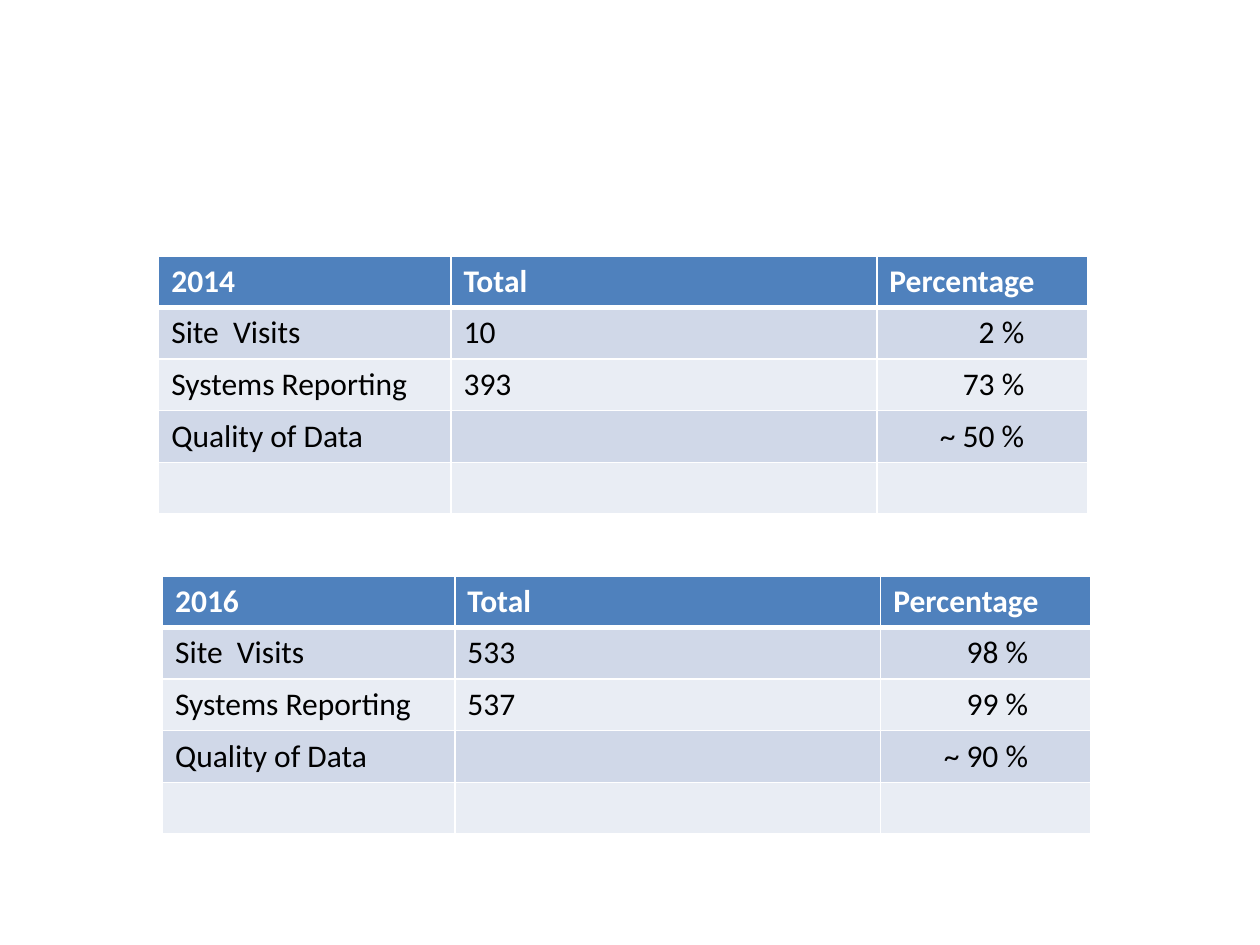
from dataclasses import dataclass

from lxml.etree import SubElement
from pptx import Presentation
from pptx.dml.color import RGBColor
from pptx.enum.text import PP_ALIGN as Align
from pptx.oxml.ns import qn
from pptx.util import Inches, Pt

COLORS = {
    "header": "4F81BD",
    "odd": "D0D8E8",
    "even": "E9EDF4",
    "white": "FFFFFF",
    "black": "000000",
}
HEADINGS = ("Total", "Percentage")
LABELS = ("Site  Visits", "Systems Reporting", "Quality of Data", "")
COL_WIDTHS = (2.32, 3.38, 1.67)
ROW_HEIGHT = 0.41


@dataclass
class YearTable:
    year: str
    left: float
    top: float
    totals: tuple[str, ...]
    percentages: tuple[str, ...]

    def rows(self) -> list[tuple[str, ...]]:
        return [(self.year, *HEADINGS), *zip(LABELS, self.totals, self.percentages)]


TABLES = [
    YearTable("2014", 1.26, 2.03, ("10", "393", "", ""), ("2 %", "73 %", "~ 50 %", "")),
    YearTable("2016", 1.29, 4.57, ("533", "537", "", ""), ("98 %", "99 %", "~ 90 %", "")),
]


def rgb(name: str) -> RGBColor:
    return RGBColor.from_string(COLORS[name])


def write(tf, text: str, *, color: str, bold: bool = False, align=Align.LEFT,
          size: int = 18, font: str = "Calibri") -> None:
    p = tf.paragraphs[0]
    p.alignment = align
    p.font.size = Pt(size)
    if text:
        r = p.add_run()
        r.text = text
        r.font.name = font
        r.font.size = Pt(size)
        r.font.bold = bold
        r.font.color.rgb = rgb(color)


def set_borders(cell, *, top: float = 1, bottom: float = 1) -> None:
    tc_pr = cell._tc.get_or_add_tcPr()
    for side, width in (("L", 1), ("R", 1), ("T", top), ("B", bottom)):
        ln = SubElement(tc_pr, qn(f"a:ln{side}"), w=str(Pt(width)))
        fill = SubElement(ln, qn("a:solidFill"))
        SubElement(fill, qn("a:srgbClr"), val=COLORS["white"])


def draw_table(s, data: YearTable) -> None:
    rows = data.rows()
    table = s.shapes.add_table(
        len(rows), len(COL_WIDTHS), Inches(data.left), Inches(data.top),
        Inches(sum(COL_WIDTHS)), Inches(ROW_HEIGHT * len(rows)),
    ).table
    for col, width in zip(table.columns, COL_WIDTHS):
        col.width = Inches(width)
    for i, row in enumerate(rows):
        table.rows[i].height = Inches(ROW_HEIGHT)
        header = i == 0
        fill = "header" if header else "odd" if i % 2 else "even"
        for j, text in enumerate(row):
            cell = table.cell(i, j)
            set_borders(cell, top=3 if i == 1 else 1, bottom=3 if header else 1)
            cell.fill.solid()
            cell.fill.fore_color.rgb = rgb(fill)
            figure = j == 2 and not header
            if figure:
                cell.margin_right = Inches(0.5)
            write(cell.text_frame, text, color="white" if header else "black",
                  bold=header, align=Align.RIGHT if figure else Align.LEFT)


def main() -> None:
    prs = Presentation()
    prs.slide_width, prs.slide_height = Inches(10), Inches(7.5)
    s = prs.slides.add_slide(prs.slide_layouts[6])
    for data in TABLES:
        draw_table(s, data)
    prs.save("out.pptx")


if __name__ == "__main__":
    main()
